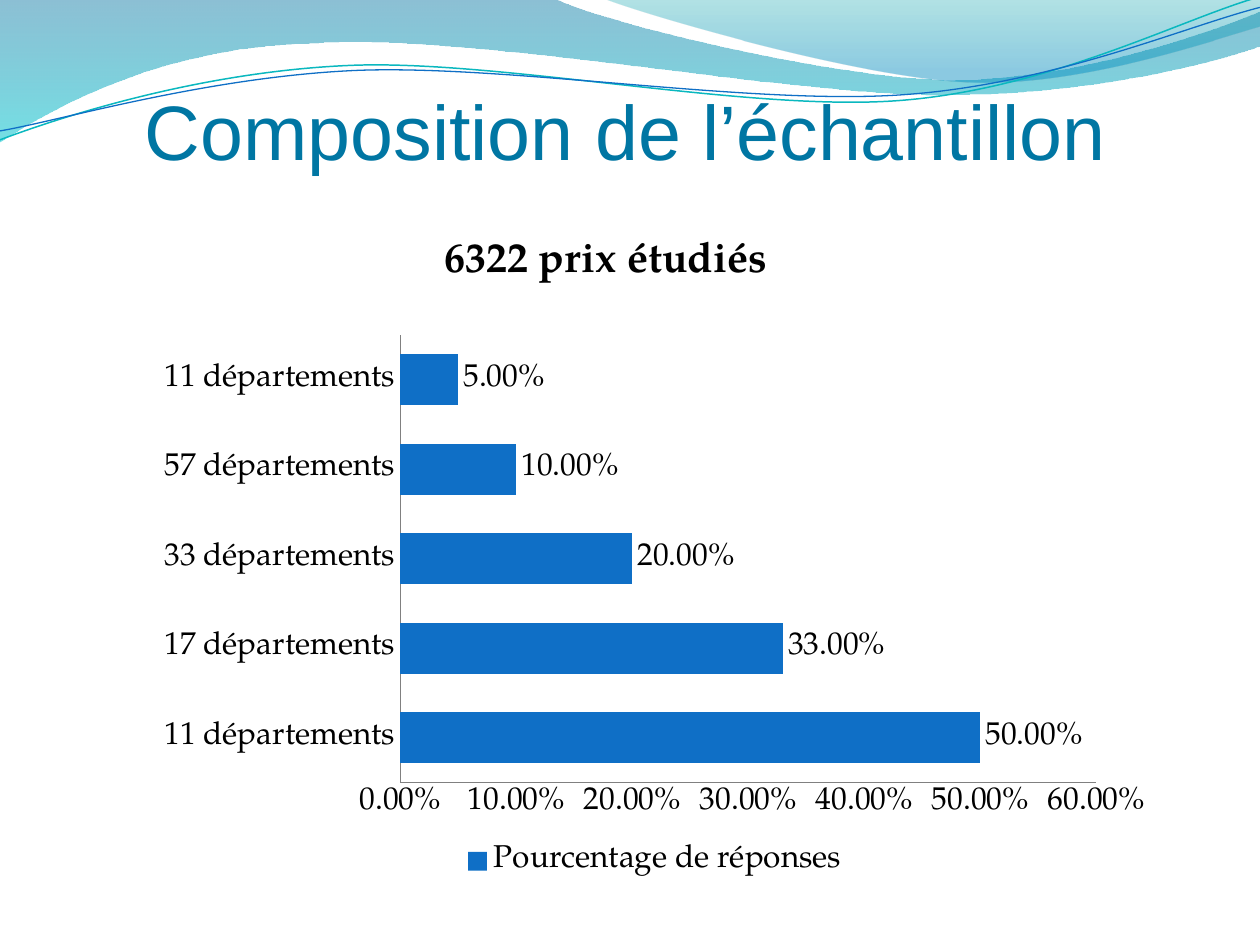
import dataclasses

import lxml.etree
import pptx
import pptx.chart.data
import pptx.dml.color
import pptx.enum.chart
import pptx.enum.text
import pptx.oxml.ns
import pptx.slide
import pptx.util

Cm = pptx.util.Cm
Pt = pptx.util.Pt
qn = pptx.oxml.ns.qn


def rgb(code):
    return pptx.dml.color.RGBColor.from_string(code)


@dataclasses.dataclass
class Theme:
    title_font: str = "Arial"
    body_font: str = "TeX Gyre Pagella"
    title_size: float = 44.1
    subtitle_size: float = 24
    chart_size: float = 18
    title: str = "0076A3"
    text: str = "000000"
    bar: str = "0F6FC6"
    teal: str = "0AB8BF"
    axis: str = "808080"
    back_wave: tuple = ((0, "0074A1", 45), (1, "00C6CF", 55))
    front_wave: tuple = ((0, "00A1A9", 30), (0.8, "008BBF", 45))


@dataclasses.dataclass
class Deck:
    theme: Theme
    slide: pptx.slide.Slide

    def outline(self, start, segments, closed):
        points = [(Cm(x), Cm(y)) for seg in segments for x, y in zip(seg[::2], seg[1::2])]
        builder = self.slide.shapes.build_freeform(Cm(start[0]), Cm(start[1]))
        builder.add_line_segments(points, close=closed)
        sp = builder.convert_to_shape()
        sp.shadow.inherit = False
        lines = iter(list(sp._element.spPr.iter(qn("a:lnTo"))))
        for seg in segments:
            first = next(lines)
            if len(seg) == 6:
                bezier = first.makeelement(qn("a:cubicBezTo"))
                first.addprevious(bezier)
                for line in (first, next(lines), next(lines)):
                    bezier.append(line[0])
                    line.getparent().remove(line)
        return sp

    def wave(self, start, segments, stops):
        sp = self.outline(start, segments, True)
        sp.line.fill.background()
        sp.fill.gradient()
        sp.fill.gradient_angle = 270
        for stop, (position, color, opacity) in zip(sp.fill.gradient_stops, stops):
            stop.position = position
            stop.color.rgb = rgb(color)
        colors = sp._element.spPr.iter(qn("a:srgbClr"))
        for clr, (position, color, opacity) in zip(colors, stops):
            lxml.etree.SubElement(clr, qn("a:alpha"), val=str(opacity * 1000))

    def curve(self, start, segments, color, width):
        sp = self.outline(start, segments, False)
        sp.fill.background()
        sp.line.color.rgb = rgb(color)
        sp.line.width = Pt(width)

    def text(self, box, content, font, size, color, bold=False, centered=False):
        sp = self.slide.shapes.add_textbox(*map(Cm, box))
        tf = sp.text_frame
        tf.word_wrap = True
        p = tf.paragraphs[0]
        if centered:
            tf.margin_left = tf.margin_right = tf.margin_bottom = 0
            tf.vertical_anchor = pptx.enum.text.MSO_ANCHOR.BOTTOM
            p.alignment = pptx.enum.text.PP_ALIGN.CENTER
        r = p.add_run()
        r.text = content
        r.font.name = font
        r.font.size = Pt(size)
        r.font.bold = bold
        r.font.color.rgb = rgb(color)

    def bar_chart(self, box, name, categories, values):
        theme = self.theme
        percent = "0.00%"
        data = pptx.chart.data.CategoryChartData(number_format=percent)
        data.categories = categories
        data.add_series(name, values)
        chart = self.slide.shapes.add_chart(
            pptx.enum.chart.XL_CHART_TYPE.BAR_CLUSTERED, *map(Cm, box), data).chart
        chart.has_title = False
        chart.font.name = theme.body_font
        chart.font.size = Pt(theme.chart_size)
        chart.font.color.rgb = rgb(theme.text)
        chart.has_legend = True
        chart.legend.position = pptx.enum.chart.XL_LEGEND_POSITION.BOTTOM
        chart.legend.include_in_layout = False
        for axis in (chart.category_axis, chart.value_axis):
            axis.has_major_gridlines = False
            axis.major_tick_mark = pptx.enum.chart.XL_TICK_MARK.NONE
            axis.minor_tick_mark = pptx.enum.chart.XL_TICK_MARK.NONE
            axis.format.line.color.rgb = rgb(theme.axis)
            axis.format.line.width = Pt(0.75)
        axis = chart.value_axis
        axis.minimum_scale, axis.maximum_scale, axis.major_unit = 0, 0.6, 0.1
        axis.tick_labels.number_format = percent
        axis.tick_labels.number_format_is_linked = False
        plot = chart.plots[0]
        plot.gap_width = 75
        plot.vary_by_categories = False
        plot.has_data_labels = True
        labels = plot.data_labels
        labels.show_value = True
        labels.number_format = percent
        labels.number_format_is_linked = False
        labels.position = pptx.enum.chart.XL_LABEL_POSITION.OUTSIDE_END
        fill = plot.series[0].format.fill
        fill.solid()
        fill.fore_color.rgb = rgb(theme.bar)


def main():
    prs = pptx.Presentation()
    prs.slide_width, prs.slide_height = Cm(25.4), Cm(19.05)
    theme = Theme()
    deck = Deck(theme, prs.slides.add_slide(prs.slide_layouts[6]))

    deck.wave((0, 0), [
        (11.18, -0.03),
        (12.09, 0.43, 16.87, 1.6, 19.25, 1.6),
        (21.67, 1.6, 24.33, 0.66, 25.4, 0.23),
        (25.43, 0.91),
        (24.97, 1.12, 22.1, 1.93, 18.95, 1.91),
        (15.8, 1.91, 9.7, 0.71, 6.53, 0.86),
        (3.28, 0.91, 1.17, 2.11, -0.03, 2.87),
    ], theme.back_wave)
    deck.wave((12.17, -0.03), [
        (12.93, 0.28, 17.32, 1.57, 19.53, 1.65),
        (21.74, 1.75, 24.41, 0.81, 25.4, 0.53),
        (25.4, 0),
    ], theme.front_wave)
    deck.curve((0, 2.82), [
        (1.22, 2.36, 4.01, 1.45, 7.04, 1.32),
        (10.03, 1.19, 15.06, 2.26, 18.11, 2.03),
        (21.16, 1.8, 23.83, 0.38, 25.35, -0.05),
    ], theme.teal, 0.85)
    deck.curve((0, 2.64), [
        (1.19, 2.44, 4.17, 1.55, 7.19, 1.42),
        (10.24, 1.3, 15.16, 2.13, 18.21, 1.91),
        (21.23, 1.7, 23.9, 0.53, 25.4, 0.15),
    ], theme.bar, 0.75)

    deck.text((1.09, 1.94, 23.06, 1.6), "Composition de l’échantillon",
              theme.title_font, theme.title_size, theme.title, centered=True)
    deck.bar_chart((2.9, 6.53, 20.6, 11.28), "Pourcentage de réponses",
                   [f"{count} départements" for count in (11, 17, 33, 57, 11)],
                   (0.5, 0.33, 0.2, 0.1, 0.05))
    deck.text((8.71, 4.52, 7.8, 1.27), "6322 prix étudiés",
              theme.body_font, theme.subtitle_size, theme.text, bold=True)
    prs.save("out.pptx")


if __name__ == "__main__":
    main()
